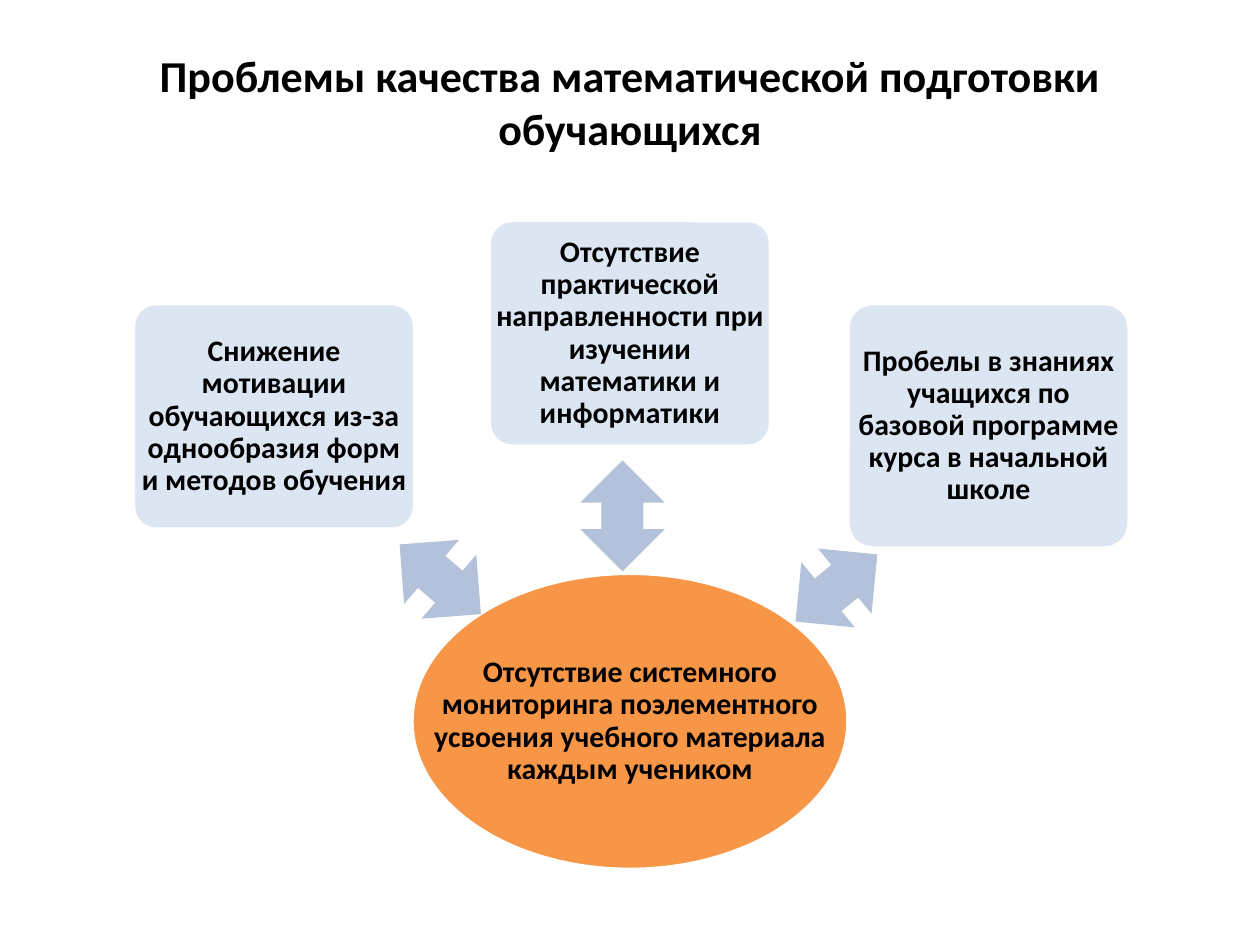
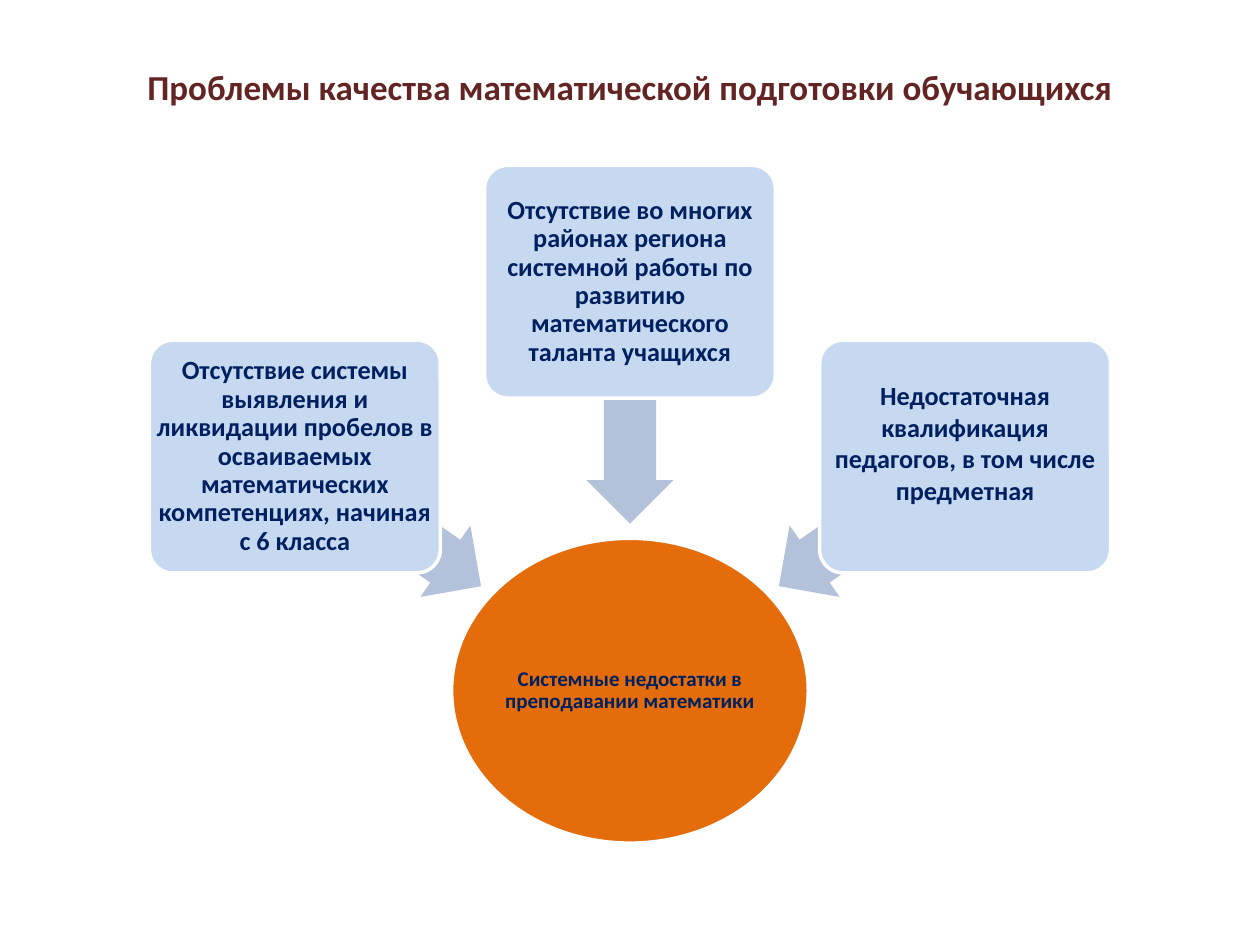
import pptx
import pptx.util
import pptx.dml.color
import pptx.enum.shapes
import pptx.enum.text

Pt = pptx.util.Pt
SHAPES = pptx.enum.shapes.MSO_SHAPE
FONT = "Calibri"
SLIDE_WIDTH, SLIDE_HEIGHT = 720, 540
CENTER = SLIDE_WIDTH / 2

COLORS = {
    "white": "FFFFFF", "black": "000000", "maroon": "632523", "navy": "002060",
    "arrow": "B3C1DB", "pale": "DCE6F2", "sky": "C6D9F1",
    "orange": "F79646", "dark orange": "E46C0A",
}

# Content: cards are (text, centre x, top, height, extra bottom inset, line spacing),
# arrows are (centre x, centre y, length, rotation), one for each card
TITLE = "Проблемы качества математической подготовки обучающихся"
SLIDES = [
    {
        "title": {"height": 72.7, "size": 25.2, "color": "black"},
        "hub": {"text": "Отсутствие системного мониторинга поэлементного "
                        "усвоения учебного материала каждым учеником",
                "top": 327.6, "width": 249.2, "height": 169.2,
                "fill": "orange", "size": 17},
        "card": {"width": 160.6, "fill": "pale", "size": 17, "inset": 2.6},
        "text color": "black",
        "cards": [
            ("Снижение мотивации обучающихся из-за однообразия форм и методов обучения",
             156.6, 173.5, 128.9, 0, 0.9),
            ("Отсутствие практической направленности при изучении математики и информатики",
             CENTER, 126, 128.9, 0, 0.9),
            ("Пробелы в знаниях учащихся по базовой программе курса в начальной школе",
             564.9, 173.5, 139.7, 0, 0.9),
        ],
        "arrow": {"shape": SHAPES.LEFT_RIGHT_ARROW, "width": 48.2, "adjust": (0.5, 0.5)},
        "arrows": [(251.6, 331, 61.2, 220.6), (355.7, 294.8, 63.4, 270),
                   (478, 336, 60.5, 320.6)],
    },
    {
        "title": {"height": 55.4, "size": 20, "color": "maroon"},
        "hub": {"text": "Системные недостатки в преподавании математики",
                "top": 307.6, "width": 203.8, "height": 174.2,
                "fill": "dark orange", "size": 12},
        "card": {"width": 166.2, "fill": "sky", "size": 15, "inset": 2.3},
        "text color": "navy",
        "cards": [
            ("Отсутствие системы выявления и ликвидации пробелов в осваиваемых "
             "математических компетенциях, начиная с 6 класса",
             CENTER - 191.5, 194.4, 133, 0, 0.9),
            ("Отсутствие во многих районах региона системной работы по развитию "
             "математического таланта учащихся",
             CENTER, 94.5, 133, 0, 0.9),
            ("Недостаточная квалификация педагогов, в том числе предметная",
             CENTER + 191.5, 194.4, 133, 16, 1),
        ],
        "arrow": {"shape": SHAPES.LEFT_ARROW, "width": 49.8, "adjust": (0.6, 0.5)},
        "arrows": [(CENTER - 138.2, 297.8, 129.6, 215), (CENTER, 230, 138.4, 270),
                   (CENTER + 138.2, 297.8, 129.6, 325)],
    },
]


def rgb(name):
    return pptx.dml.color.RGBColor.from_string(COLORS[name])


def add_figure(page, kind, area, fill, outlined=True, adjust=()):
    figure = page.shapes.add_shape(kind, *map(Pt, area))
    figure.shadow.inherit = False
    figure.fill.solid()
    figure.fill.fore_color.rgb = rgb(fill)
    if outlined:
        figure.line.color.rgb = rgb("white")
        figure.line.width = Pt(2)
    else:
        figure.line.fill.background()
    for index, value in enumerate(adjust):
        figure.adjustments[index] = value
    return figure


def add_text(page, area, text, size, color, inset, spacing=1, extra_bottom=0):
    box = page.shapes.add_textbox(*map(Pt, area))
    frame = box.text_frame
    frame.word_wrap = True
    frame.vertical_anchor = pptx.enum.text.MSO_ANCHOR.MIDDLE
    frame.margin_left = frame.margin_right = frame.margin_top = Pt(inset)
    frame.margin_bottom = Pt(inset + extra_bottom)
    para = frame.paragraphs[0]
    para.alignment = pptx.enum.text.PP_ALIGN.CENTER
    para.line_spacing = spacing
    span = para.add_run()
    span.text = text
    span.font.name = FONT
    span.font.size = Pt(size)
    span.font.bold = True
    span.font.color.rgb = rgb(color)


def build_page(deck, content):
    page = deck.slides.add_slide(deck.slide_layouts[6])

    # Title
    title = content["title"]
    add_text(page, (36, 21.6, SLIDE_WIDTH - 72, title["height"]), TITLE,
             title["size"], title["color"], inset=5)

    # Central problem; its text runs across the full width of the ellipse
    hub = content["hub"]
    area = (CENTER - hub["width"] / 2, hub["top"], hub["width"], hub["height"])
    add_figure(page, SHAPES.OVAL, area, hub["fill"])
    add_text(page, area, hub["text"], hub["size"], content["text color"], 0.7, 0.9)

    # Each arrow lies under its card
    arrow, card = content["arrow"], content["card"]
    for (x, y, length, angle), (text, middle, top, height, extra, spacing) in zip(
            content["arrows"], content["cards"]):
        area = (x - length / 2, y - arrow["width"] / 2, length, arrow["width"])
        figure = add_figure(page, arrow["shape"], area, "arrow", False, arrow["adjust"])
        figure.rotation = angle

        area = (middle - card["width"] / 2, top, card["width"], height)
        add_figure(page, SHAPES.ROUNDED_RECTANGLE, area, card["fill"], adjust=(0.1,))
        add_text(page, area, text, card["size"], content["text color"],
                 card["inset"], spacing, extra)


def main():
    deck = pptx.Presentation()
    deck.slide_width, deck.slide_height = Pt(SLIDE_WIDTH), Pt(SLIDE_HEIGHT)
    for content in SLIDES:
        build_page(deck, content)
    deck.save("out.pptx")


if __name__ == "__main__":
    main()
